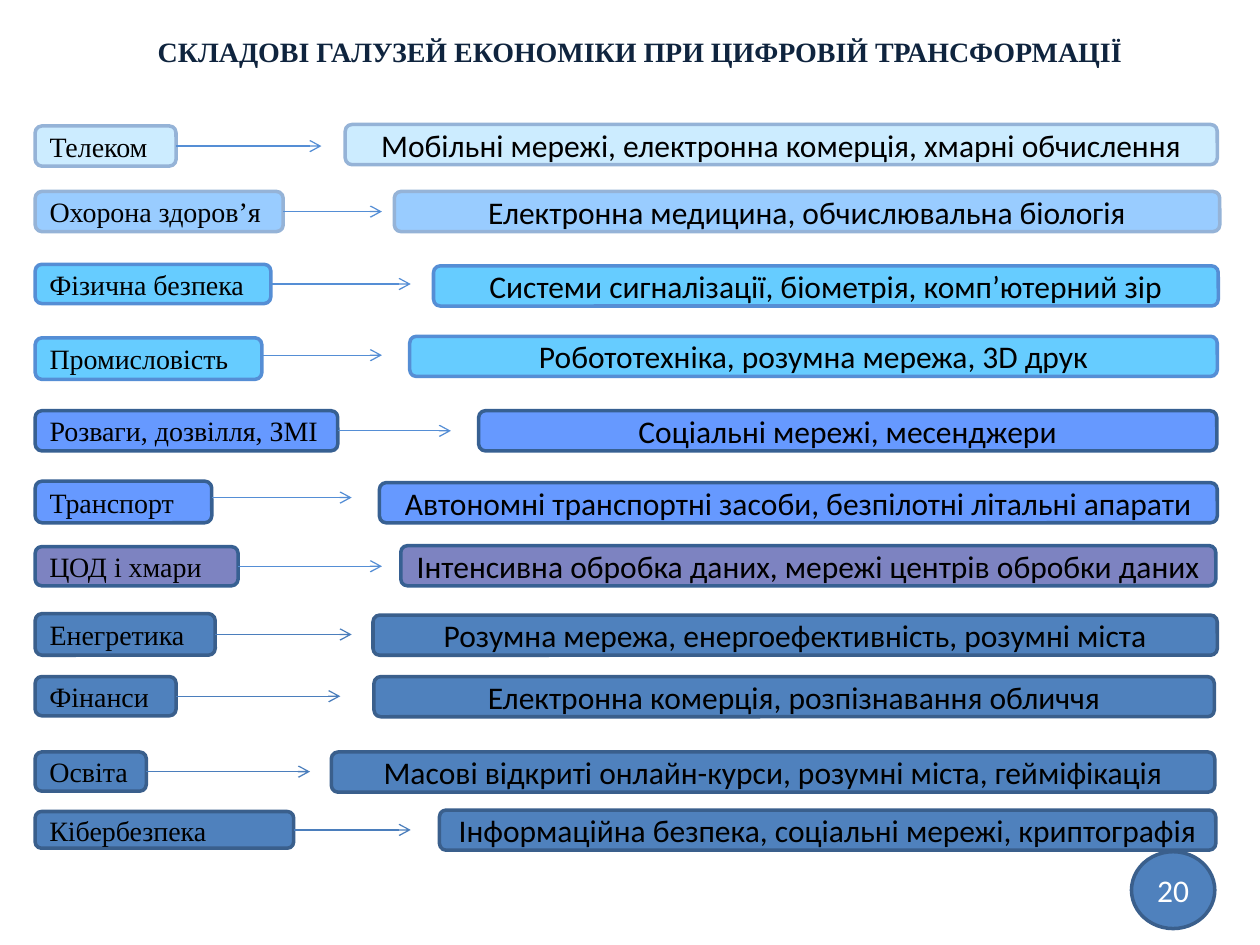
import dataclasses
import typing

import lxml.etree
import pptx
import pptx.dml.color
import pptx.enum.shapes
import pptx.enum.text
import pptx.oxml.ns
import pptx.util

Cm = pptx.util.Cm
Pt = pptx.util.Pt
Kind = pptx.enum.shapes.MSO_SHAPE
Align = pptx.enum.text.PP_ALIGN
Anchor = pptx.enum.text.MSO_ANCHOR

LEFT = 0.71    # left edge of all sector boxes, cm
HIGH = 0.81    # height of all detail boxes, cm


class Tone(typing.NamedTuple):
    fill: str
    edge: str
    arrow: str


class Box(typing.NamedTuple):
    left: float
    top: float
    width: float
    height: float


@dataclasses.dataclass
class Row:
    name: str
    top: float
    width: float
    height: float
    tip: float
    text: str
    side: float
    head: float
    span: float
    tone: Tone
    level: typing.Optional[float] = None    # arrow height when off the middle


ICE = Tone("CCECFF", "95B3D7", "558ED5")
SKY = Tone("99CCFF", "95B3D7", "558ED5")
AQUA = Tone("66CCFF", "558ED5", "558ED5")
BLUE = Tone("6699FF", "376092", "558ED5")
PLUM = Tone("7D83C1", "376092", "558ED5")
STEEL = Tone("4F81BD", "3A5F8C", "4B7EBC")

ROWS = [
    Row("Телеком", 2.54, 2.84, 0.81, 6.48,
        "Мобільні мережі, електронна комерція, хмарні обчислення",
        6.96, 2.51, 17.58, ICE),
    Row("Охорона здоров’я", 3.86, 5.0, 0.81, 7.7,
        "Електронна медицина, обчислювальна біологія",
        7.95, 3.86, 16.64, SKY),
    Row("Фізична безпека", 5.33, 4.75, 0.79, 8.28,
        "Системи сигналізації, біометрія, комп’ютерний зір",
        8.74, 5.36, 15.82, AQUA),
    Row("Промисловість", 6.81, 4.57, 0.84, 7.7,
        "Робототехніка, розумна мережа, 3D друк",
        8.26, 6.78, 16.28, AQUA, 7.16),
    Row("Розваги, дозвілля, ЗМІ", 8.28, 6.1, 0.81, 9.09,
        "Соціальні мережі, месенджери",
        9.65, 8.28, 14.88, BLUE),
    Row("Транспорт", 9.7, 3.56, 0.84, 7.09,
        "Автономні транспортні засоби, безпілотні літальні апарати",
        7.65, 9.73, 16.89, BLUE, 10.03),
    Row("ЦОД і хмари", 11.02, 4.09, 0.79, 7.7,
        "Інтенсивна обробка даних, мережі центрів обробки даних",
        8.08, 11.0, 16.43, PLUM),
    Row("Енегретика", 12.37, 3.63, 0.84, 7.09,
        "Розумна мережа, енергоефективність, розумні міста",
        7.52, 12.4, 17.02, STEEL),
    Row("Фінанси", 13.64, 2.84, 0.79, 6.86,
        "Електронна комерція, розпізнавання обличчя",
        7.54, 13.64, 16.94, STEEL),
    Row("Освіта", 15.16, 2.24, 0.79, 6.25,
        "Масові відкриті онлайн-курси, розумні міста, гейміфікація",
        6.68, 15.16, 17.81, STEEL),
    Row("Кібербезпека", 16.36, 5.21, 0.74, 8.28,
        "Інформаційна безпека, соціальні мережі, криптографія",
        8.86, 16.33, 15.65, STEEL),
]

SERIF = {"name": "Times New Roman", "size": Pt(16)}
SANS = {"name": "Calibri", "size": Pt(18)}


def paint(part: typing.Any, tint: str) -> None:
    """Give a fill, or the fill of a line or font, one plain colour."""
    part.solid()
    part.fore_color.rgb = pptx.dml.color.RGBColor.from_string(tint)


def write(shape: typing.Any, text: str, font: dict, tint: str,
          align: Align, anchor: Anchor) -> None:
    frame = shape.text_frame
    frame.word_wrap = True
    frame.vertical_anchor = anchor
    para = frame.paragraphs[0]
    para.alignment = align
    run = para.add_run()
    run.text = text
    for key, value in font.items():
        setattr(run.font, key, value)
    paint(run.font.fill, tint)


def draw_box(slide: typing.Any, kind: Kind, box: Box, tone: Tone, text: str,
             font: dict, align: Align = Align.CENTER,
             tint: str = "000000") -> typing.Any:
    shape = slide.shapes.add_shape(kind, *map(Cm, box))
    shape.shadow.inherit = False
    paint(shape.fill, tone.fill)
    paint(shape.line.fill, tone.edge)
    shape.line.width = Pt(2)
    write(shape, text, font, tint, align, Anchor.MIDDLE)
    return shape


def draw_arrow(slide: typing.Any, row: Row, label: typing.Any) -> None:
    y = label.top + label.height // 2 if row.level is None else Cm(row.level)
    line = slide.shapes.add_connector(
        pptx.enum.shapes.MSO_CONNECTOR.STRAIGHT,
        label.left + label.width, y, Cm(row.tip), y)
    if row.level is None:
        line.begin_connect(label, 3)
    paint(line.line.fill, row.tone.arrow)
    line.line.width = Pt(0.75)
    # Open arrowhead, no shadow
    qn = pptx.oxml.ns.qn
    lxml.etree.SubElement(line.line._get_or_add_ln(), qn("a:tailEnd"),
                          type="arrow")
    lxml.etree.SubElement(line._element.spPr, qn("a:effectLst"))


def draw_row(slide: typing.Any, row: Row) -> None:
    label = draw_box(slide, Kind.ROUNDED_RECTANGLE,
                     Box(LEFT, row.top, row.width, row.height),
                     row.tone, row.name, SERIF, Align.LEFT)
    draw_arrow(slide, row, label)
    draw_box(slide, Kind.ROUNDED_RECTANGLE,
             Box(row.side, row.head, row.span, HIGH),
             row.tone, row.text, SANS)


def main() -> None:
    deck = pptx.Presentation()
    deck.slide_width, deck.slide_height = Cm(25.4), Cm(19.05)
    slide = deck.slides.add_slide(deck.slide_layouts[6])

    # Sectors and what they consist of
    for row in ROWS:
        draw_row(slide, row)

    # Title
    title = slide.shapes.add_textbox(*map(Cm, Box(0.89, 0.58, 24.03, 0.94)))
    write(title, "СКЛАДОВІ ГАЛУЗЕЙ ЕКОНОМІКИ ПРИ ЦИФРОВІЙ ТРАНСФОРМАЦІЇ",
          {**SERIF, "bold": True}, "0F243E", Align.CENTER, Anchor.TOP)
    title.text_frame.auto_size = pptx.enum.text.MSO_AUTO_SIZE.SHAPE_TO_FIT_TEXT

    # Page number
    draw_box(slide, Kind.OVAL, Box(22.81, 17.17, 1.68, 1.55), STEEL, "20",
             SANS, tint="FFFFFF")

    deck.save("out.pptx")


if __name__ == "__main__":
    main()
